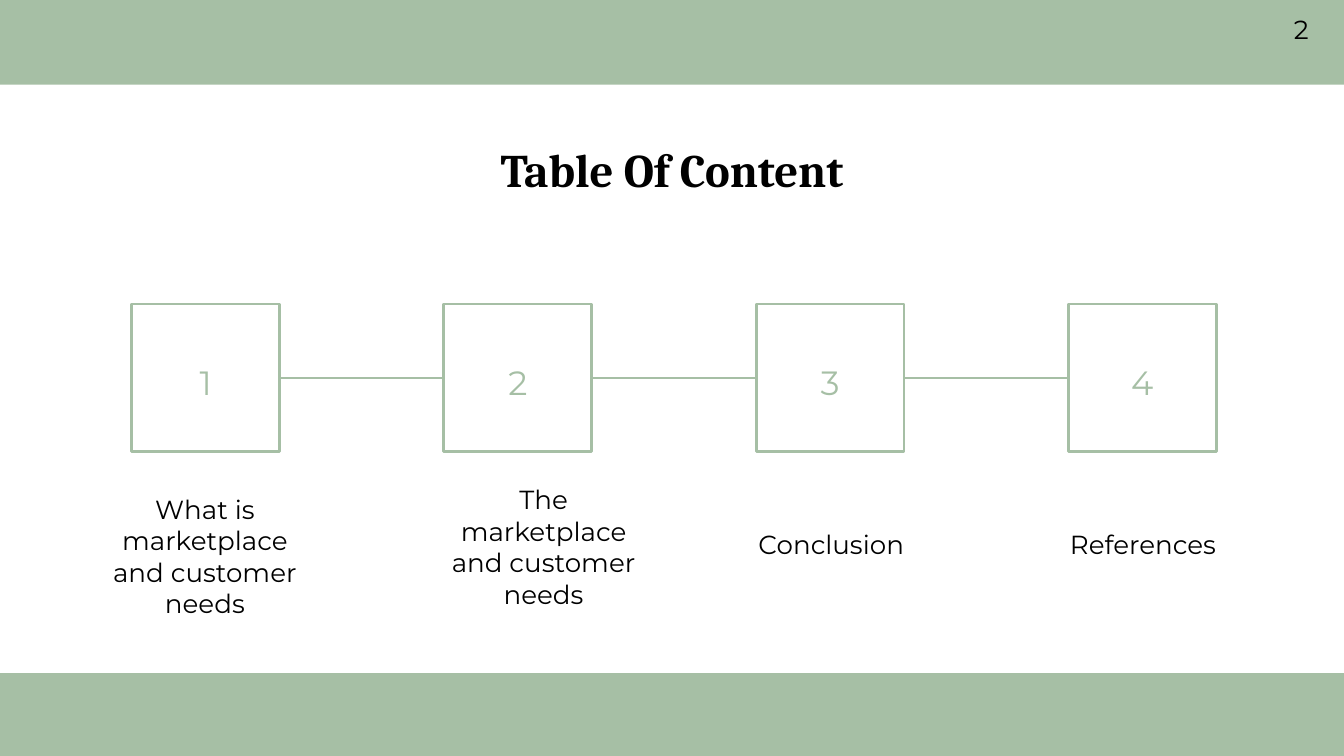
"""Build a table of contents slide with four numbered, connected steps."""
from lxml import etree
from pptx import Presentation
from pptx.dml.color import RGBColor
from pptx.enum.shapes import MSO_CONNECTOR, MSO_SHAPE
from pptx.enum.text import MSO_ANCHOR, PP_ALIGN
from pptx.oxml.ns import qn
from pptx.util import Inches, Pt

RECTANGLE = MSO_SHAPE.RECTANGLE
STRAIGHT = MSO_CONNECTOR.STRAIGHT
TOP = MSO_ANCHOR.TOP
LEFT = PP_ALIGN.LEFT
CENTER = PP_ALIGN.CENTER

SLIDE_WIDTH = 10
SLIDE_HEIGHT = SLIDE_WIDTH * 9 / 16
STEPS = [
    ("What is marketplace and customer needs", 0.62, 3.57, 1.81, 1.27),
    ("The marketplace and customer needs", 3.14, 3.5, 1.81, 1.27),
    ("Conclusion", 5.47, 3.83, 1.43, 0.6),
    ("References", 7.79, 3.83, 1.43, 0.6),
]
FIRST_LEFT, LAST_LEFT = 0.98, 7.95
BOX_SIZE = 1.1
BOX_TOP = (SLIDE_HEIGHT - BOX_SIZE) / 2
NUMBER_WIDTH = 1.43


def color(value):
    return RGBColor.from_string(value)


class SlideBuilder:
    green = "A6BFA5"
    white = "FFFFFF"
    black = "000000"
    heading_font = "Cambria"
    body_font = "Montserrat"
    line_width = 1.5

    def __init__(self, slide):
        self.slide = slide

    def rectangle(self, left, top, width, height, fill, outline=None):
        shape = self.slide.shapes.add_shape(
            RECTANGLE, Inches(left), Inches(top), Inches(width), Inches(height))
        shape.shadow.inherit = False
        shape.fill.solid()
        shape.fill.fore_color.rgb = color(fill)
        if outline:
            shape.line.color.rgb = color(outline)
            shape.line.width = Pt(self.line_width)
        else:
            shape.line.fill.background()

    def line(self, start_x, start_y, end_x, end_y):
        connector = self.slide.shapes.add_connector(
            STRAIGHT, Inches(start_x), Inches(start_y), Inches(end_x), Inches(end_y))
        connector.line.color.rgb = color(self.green)
        connector.line.width = Pt(self.line_width)
        etree.SubElement(connector._element.spPr, qn("a:effectLst"))

    def text(self, content, left, top, width, height, size=14, font=body_font,
             fill=black, bold=False, alignment=CENTER):
        shape = self.slide.shapes.add_textbox(
            Inches(left), Inches(top), Inches(width), Inches(height))
        frame = shape.text_frame
        frame.word_wrap = True
        frame.vertical_anchor = TOP
        frame.margin_left = frame.margin_right = Inches(0.1)
        frame.margin_top = frame.margin_bottom = Inches(0.1)
        paragraph = frame.paragraphs[0]
        paragraph.alignment = alignment
        run = paragraph.add_run()
        run.text = content
        run.font.name = font
        run.font.size = Pt(size)
        run.font.bold = bold
        run.font.color.rgb = color(fill)


def main():
    presentation = Presentation()
    presentation.slide_width = Inches(SLIDE_WIDTH)
    presentation.slide_height = Inches(SLIDE_HEIGHT)
    builder = SlideBuilder(presentation.slides.add_slide(presentation.slide_layouts[6]))

    builder.rectangle(-0.03, 5.01, 10.03, SLIDE_HEIGHT - 5.01, builder.green)
    builder.rectangle(0, 0, SLIDE_WIDTH, 0.63, builder.green)
    middle = SLIDE_HEIGHT / 2
    builder.line(FIRST_LEFT, middle, LAST_LEFT + BOX_SIZE, middle)
    builder.text("Table Of Content", 0.73, 0.95, 8.54, 0.7, size=25,
                 font=builder.heading_font, bold=True)

    step_gap = (LAST_LEFT - FIRST_LEFT) / (len(STEPS) - 1)
    for index, (label, *label_area) in enumerate(STEPS):
        left = FIRST_LEFT + index * step_gap
        number_left = left + (BOX_SIZE - NUMBER_WIDTH) / 2
        builder.rectangle(left, BOX_TOP, BOX_SIZE, BOX_SIZE, builder.white, builder.green)
        builder.text(str(index + 1), number_left, 2.59, NUMBER_WIDTH, 0.44,
                     size=18, fill=builder.green)
        builder.text(label, *label_area)

    builder.text("2", 9.53, 0, 0.47, 0.44, alignment=LEFT)
    presentation.save("out.pptx")


if __name__ == "__main__":
    main()
